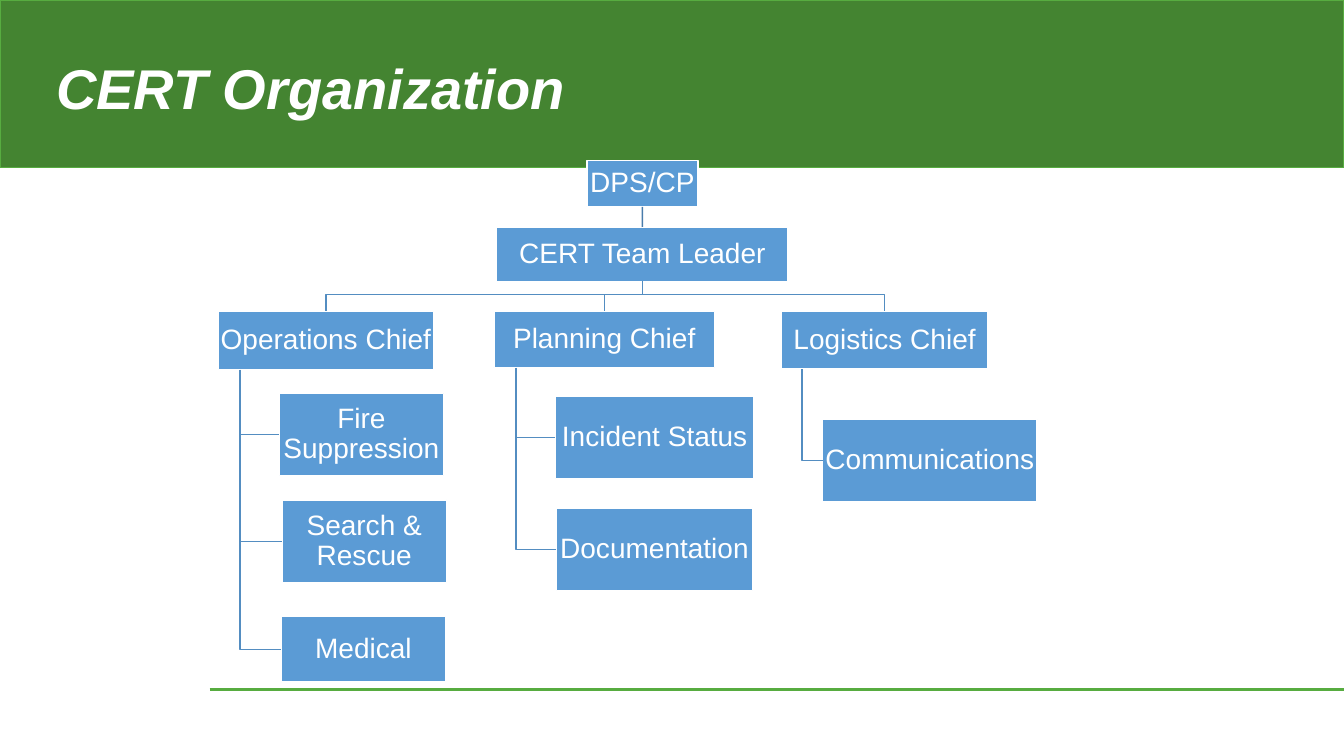
from dataclasses import dataclass

from lxml import etree
from pptx import Presentation
from pptx.dml.color import RGBColor
from pptx.enum.shapes import MSO_CONNECTOR, MSO_SHAPE
from pptx.enum.text import MSO_ANCHOR, PP_ALIGN
from pptx.oxml.ns import qn
from pptx.util import Cm, Pt

RECTANGLE = MSO_SHAPE.RECTANGLE
STRAIGHT = MSO_CONNECTOR.STRAIGHT
MIDDLE = MSO_ANCHOR.MIDDLE
LEFT, CENTER = PP_ALIGN.LEFT, PP_ALIGN.CENTER
TOP_SIDE, BOTTOM_SIDE = 0, 2


@dataclass(frozen=True)
class Theme:
    font: str = "Arial"
    title_size: int = 40
    box_size: int = 20
    white: str = "FFFFFF"
    banner: str = "448431"
    green: str = "57AC40"
    box: str = "5B9BD5"
    branch: str = "538DC1"
    root_link: str = "497CAB"


THEME = Theme()
SLIDE_WIDTH, SLIDE_HEIGHT = 33.87, 19.05
BUS_RISE = 0.43
TRUNK_SHARE = 0.1

ROOT = ("DPS/CP", 14.79, 4.04, 2.8, 1.17)
LEADER = ("CERT Team Leader", 12.52, 5.72, 7.34, 1.37)
SECTIONS = [
    (("Operations Chief", 5.51, 7.85, 5.41, 1.47), [
        ("Fire Suppression", 7.04, 9.91, 4.14, 2.08),
        ("Search & Rescue", 7.11, 12.6, 4.14, 2.08),
        ("Medical", 7.09, 15.54, 4.14, 1.65),
    ]),
    (("Planning Chief", 12.45, 7.85, 5.56, 1.42), [
        ("Incident Status", 14, 9.98, 5, 2.08),
        ("Documentation", 14.02, 12.8, 4.95, 2.08),
    ]),
    (("Logistics Chief", 19.69, 7.85, 5.21, 1.45), [
        ("Communications", 20.73, 10.57, 5.41, 2.08),
    ]),
]


def color(value):
    return RGBColor.from_string(value)


def style_line(line, value, width=1):
    line.color.rgb = color(value)
    line.width = Pt(width)


def write(shape, text, size, align, emphasis=False):
    frame = shape.text_frame
    frame.word_wrap = True
    frame.vertical_anchor = MIDDLE
    para = frame.paragraphs[0]
    para.alignment = align
    para.line_spacing = 0.9
    span = para.add_run()
    span.text = text
    span.font.name = THEME.font
    span.font.size = Pt(size)
    span.font.bold = span.font.italic = emphasis
    span.font.color.rgb = color(THEME.white)


def add_rectangle(page, left, top, width, height, fill, outline):
    shape = page.shapes.add_shape(RECTANGLE, Cm(left), Cm(top), Cm(width), Cm(height))
    shape.shadow.inherit = False
    shape.fill.solid()
    shape.fill.fore_color.rgb = color(fill)
    style_line(shape.line, outline)
    return shape


def add_role(page, name, left, top, width, height):
    box = add_rectangle(page, left, top, width, height, THEME.box, THEME.white)
    frame = box.text_frame
    frame.margin_left = frame.margin_right = Cm(0.02)
    frame.margin_top = frame.margin_bottom = Cm(0.02)
    write(box, name, THEME.box_size, CENTER)
    return box


def add_straight(page, start, end, value, width=1):
    link = page.shapes.add_connector(STRAIGHT, *start, *end)
    style_line(link.line, value, width)
    etree.SubElement(link._element.spPr, qn("a:effectLst"))
    return link


def add_branch(page, points):
    builder = page.shapes.build_freeform(*points[0])
    builder.add_line_segments(points[1:], close=False)
    branch = builder.convert_to_shape()
    branch.shadow.inherit = False
    branch.fill.background()
    style_line(branch.line, THEME.branch)


def bottom_of(box):
    return box.top + box.height


def middle_of(box):
    return box.left + box.width // 2


def link_chief(page, leader, chief):
    bus = bottom_of(leader) + Cm(0.76) - Cm(BUS_RISE)
    start, end = middle_of(leader), middle_of(chief)
    add_branch(page, [(start, bottom_of(leader)), (start, bus), (end, bus), (end, chief.top)])


def link_unit(page, chief, unit):
    trunk = chief.left + int(chief.width * TRUNK_SHARE)
    level = unit.top + unit.height // 2
    add_branch(page, [(trunk, bottom_of(chief)), (trunk, level), (unit.left, level)])


def add_frame(page):
    add_rectangle(page, 0, 0, SLIDE_WIDTH, 4.22, THEME.banner, THEME.green)
    footer = Cm(17.37)
    add_straight(page, (Cm(5.28), footer), (Cm(SLIDE_WIDTH), footer), THEME.green, 2.04)
    title = page.shapes.add_textbox(Cm(1.17), Cm(0.89), Cm(21.51), Cm(2.82))
    write(title, "CERT Organization", THEME.title_size, LEFT, emphasis=True)


def add_chart_of_roles(page):
    root = add_role(page, *ROOT)
    leader = add_role(page, *LEADER)
    link = add_straight(page, (0, 0), (0, 0), THEME.root_link)
    link.begin_connect(root, BOTTOM_SIDE)
    link.end_connect(leader, TOP_SIDE)
    for chief_role, unit_roles in SECTIONS:
        chief = add_role(page, *chief_role)
        link_chief(page, leader, chief)
        for unit_role in unit_roles:
            link_unit(page, chief, add_role(page, *unit_role))


def main():
    deck = Presentation()
    deck.slide_width, deck.slide_height = Cm(SLIDE_WIDTH), Cm(SLIDE_HEIGHT)
    page = deck.slides.add_slide(deck.slide_layouts[6])
    add_frame(page)
    add_chart_of_roles(page)
    deck.save("out.pptx")


if __name__ == "__main__":
    main()
